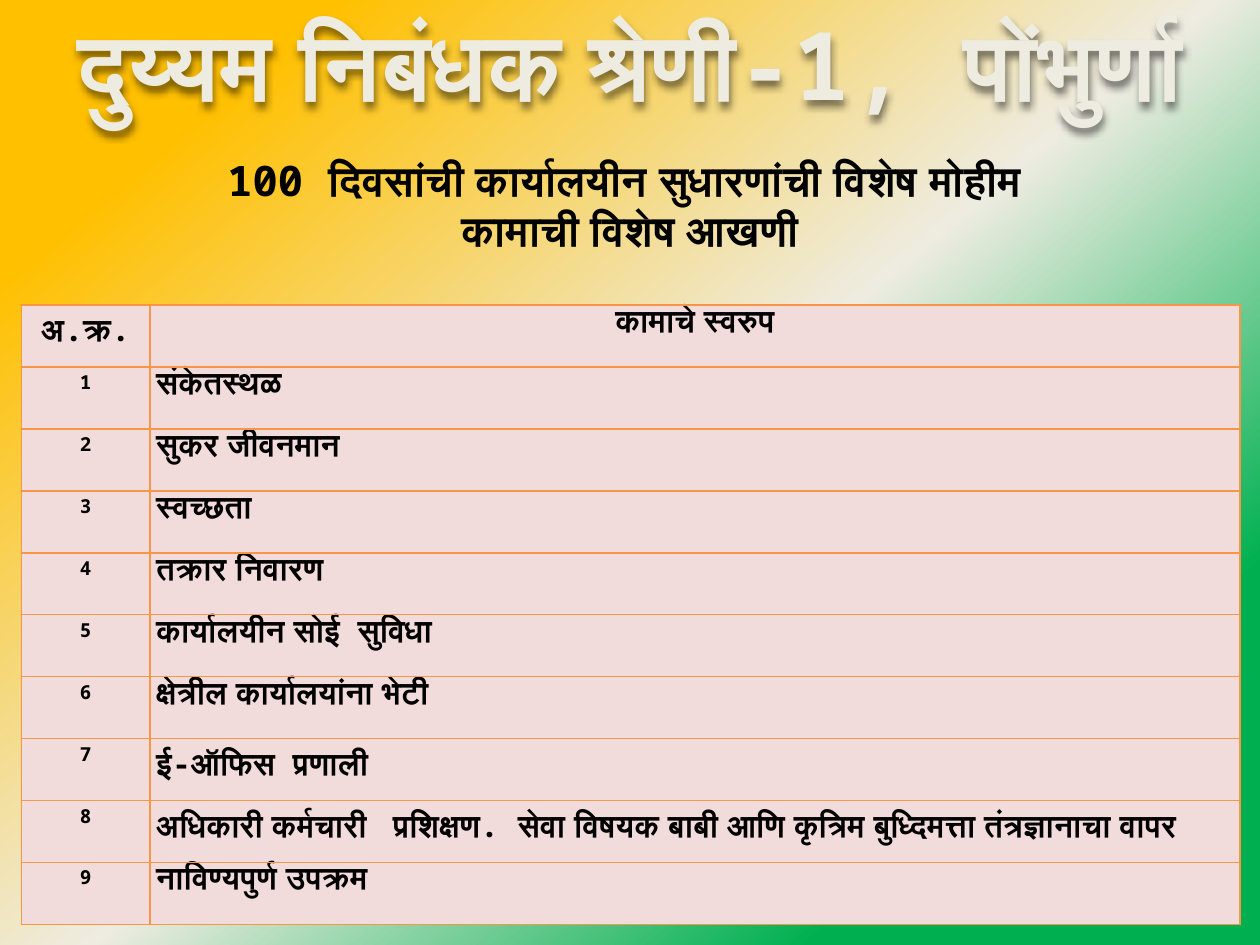
from copy import deepcopy
from dataclasses import dataclass

from lxml import etree
from pptx import Presentation
from pptx.dml.color import RGBColor
from pptx.enum.text import MSO_ANCHOR, MSO_AUTO_SIZE, PP_ALIGN
from pptx.oxml import parse_xml
from pptx.oxml.ns import nsdecls
from pptx.util import Inches, Pt

CENTER, LEFT = PP_ALIGN.CENTER, PP_ALIGN.LEFT
TOP, MIDDLE = MSO_ANCHOR.TOP, MSO_ANCHOR.MIDDLE
GROW = MSO_AUTO_SIZE.SHAPE_TO_FIT_TEXT
TITLE_ONLY = 5


@dataclass(frozen=True)
class Theme:
    """Colours, font and type sizes of the slide."""
    font: str = "Noto Sans Mono"
    ink: str = "000000"
    cream: str = "EEECE1"
    cell: str = "F2DCDB"
    border: str = "F79646"
    gradient: tuple = ((0.19, "00B050"), (0.49, "EEECE1"), (0.86, "FFC000"))
    gradient_angle: int = 130
    title_size: int = 54
    subtitle_size: int = 24
    work_size: int = 18
    number_size: int = 11


THEME = Theme()
OFFICE = "दुय्यम निबंधक श्रेणी-1, पोंभुर्णा"
CAMPAIGN = ("100 दिवसांची कार्यालयीन सुधारणांची विशेष मोहीम ", "कामाची विशेष आखणी")
HEADINGS = ("अ.क्र.", "कामाचे स्वरुप")
WORKS = (
    "संकेतस्थळ",
    "सुकर जीवनमान",
    "स्वच्छता",
    "तक्रार निवारण",
    "कार्यालयीन सोई  सुविधा",
    "क्षेत्रील कार्यालयांना भेटी",
    "ई-ऑफिस  प्रणाली",
    "अधिकारी कर्मचारी   प्रशिक्षण. सेवा विषयक बाबी आणि कृत्रिम बुध्दिमत्ता तंत्रज्ञानाचा वापर",
    "नाविण्यपुर्ण उपक्रम",
)


def style_paragraph(paragraph, size, color, align):
    """Give a paragraph its bold font, colour and alignment."""
    paragraph.alignment = align
    font = paragraph.font
    font.name, font.size, font.bold = THEME.font, Pt(size), True
    font.color.rgb = RGBColor.from_string(color)


def paint_background(slide):
    """Fill the slide with the three-colour diagonal gradient."""
    fill = slide.background.fill
    fill.gradient()
    fill.gradient_angle = THEME.gradient_angle
    stop_list = slide.element.xpath(".//p:bg//a:gsLst")[0]
    stop_list.append(deepcopy(stop_list[-1]))
    for stop, (position, color) in zip(fill.gradient_stops, THEME.gradient):
        stop.position = position
        stop.color.rgb = RGBColor.from_string(color)


def place_title(slide, left, top, width, height):
    """Move the title placeholder into its box and give it a soft shadow."""
    title = slide.shapes.title
    title.left, title.top, title.width, title.height = left, top, width, height
    frame = title.text_frame
    frame.text = OFFICE
    frame.vertical_anchor, frame.auto_size = TOP, GROW
    style_paragraph(frame.paragraphs[0], THEME.title_size, THEME.cream, CENTER)
    title.element.spPr.append(parse_xml(
        f'<a:effectLst {nsdecls("a")}><a:outerShdw blurRad="50800" dist="38100" '
        'dir="5400000" algn="t" rotWithShape="0"><a:srgbClr val="000000">'
        '<a:alpha val="50000"/></a:srgbClr></a:outerShdw></a:effectLst>'))


def place_campaign(slide, left, top, width, height):
    """Write the two centred campaign lines."""
    frame = slide.shapes.add_textbox(left, top, width, height).text_frame
    frame.word_wrap = True
    frame.vertical_anchor, frame.auto_size = MIDDLE, GROW
    frame.text = "\n".join(CAMPAIGN)
    for paragraph in frame.paragraphs:
        style_paragraph(paragraph, THEME.subtitle_size, THEME.ink, CENTER)


def add_borders(cell):
    """Draw a thin line on all four sides of a cell."""
    properties = cell._tc.get_or_add_tcPr()
    for index, side in enumerate(("lnL", "lnR", "lnT", "lnB")):
        line = parse_xml(
            f'<a:{side} {nsdecls("a")} w="{Pt(1)}"><a:solidFill/></a:{side}>')
        color = etree.SubElement(line[0], line[0].tag.replace("solidFill", "srgbClr"))
        color.set("val", THEME.border)
        properties.insert(index, line)


def write_cell(cell, text, size, align):
    """Fill one table cell and set its text."""
    cell.margin_left = cell.margin_right = Inches(0.05)
    cell.margin_top = cell.margin_bottom = 0
    cell.fill.solid()
    cell.fill.fore_color.rgb = RGBColor.from_string(THEME.cell)
    add_borders(cell)
    cell.text = text
    paragraph = cell.text_frame.paragraphs[0]
    paragraph.line_spacing = 1.07
    style_paragraph(paragraph, size, THEME.ink, align)


def place_works(slide, left, top, width, height):
    """Build the numbered table of works."""
    row_count = len(WORKS) + 1
    table = slide.shapes.add_table(row_count, 2, left, top, width, height).table
    number_width = Inches(1.02)
    table.columns[0].width = number_width
    table.columns[1].width = width - number_width
    for row in table.rows:
        row.height = height // row_count
    for column, heading in enumerate(HEADINGS):
        write_cell(table.cell(0, column), heading, THEME.work_size, CENTER)
    for number, work in enumerate(WORKS, start=1):
        write_cell(table.cell(number, 0), str(number), THEME.number_size, CENTER)
        write_cell(table.cell(number, 1), work, THEME.work_size, LEFT)


def main():
    """Build and save the slide."""
    deck = Presentation()
    deck.slide_width, deck.slide_height = Inches(10), Inches(7.5)
    slide = deck.slides.add_slide(deck.slide_layouts[TITLE_ONLY])
    paint_background(slide)
    place_title(slide, 0, 0, deck.slide_width, Inches(1.01))
    place_campaign(slide, 0, Inches(1.17), deck.slide_width, Inches(0.91))
    place_works(slide, Inches(0.17), Inches(2.42), Inches(9.67), Inches(4.92))
    deck.save("out.pptx")


if __name__ == "__main__":
    main()
